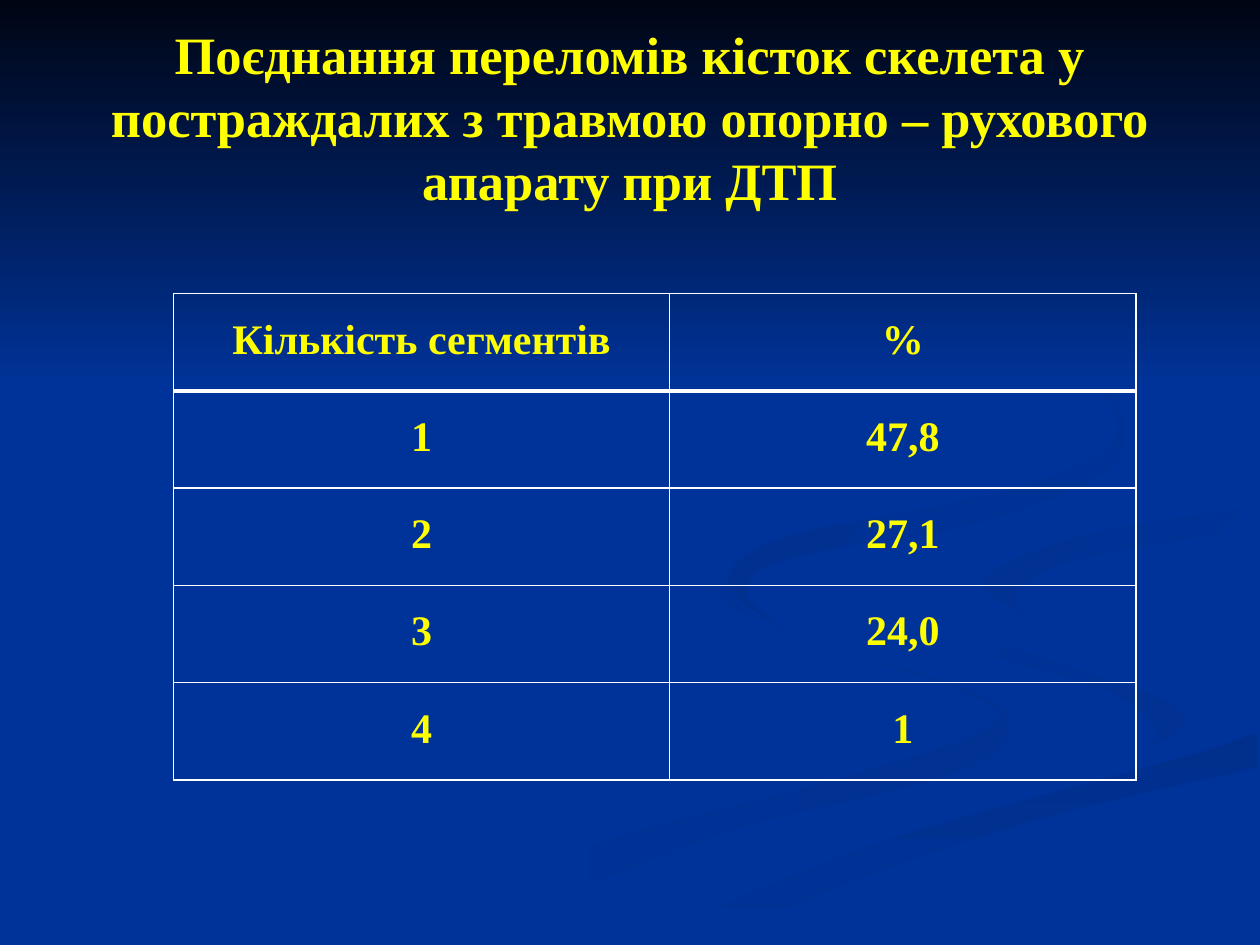
from lxml.etree import SubElement
from pptx import Presentation
from pptx.dml.color import RGBColor
from pptx.enum.shapes import MSO_SHAPE
from pptx.enum.text import MSO_ANCHOR, PP_ALIGN
from pptx.oxml.ns import qn
from pptx.util import Cm, Pt

TITLE = "Поєднання переломів кісток скелета у постраждалих з травмою опорно – рухового апарату при ДТП"
ROWS = [
    ("Кількість сегментів", "%"),
    ("1", "47,8"),
    ("2", "27,1"),
    ("3", "24,0"),
    ("4", "1"),
]
THEME = {
    "font": "Times New Roman", "title": Pt(30), "cell": Pt(24),
    "text": "FFFF00", "line": "FFFFFF", "back": "003399",
    "night": "000514", "shade": "003193", "deep": "002F8C",
}
GRID = Cm(0.0254)  # ribbon points are in hundredths of an inch
STEPS = 5

# Each ribbon: first colour, last colour, gradient angle, and its two edges
RIBBONS = [
    ("back", "shade", 0,
     [(575, 459), (594, 485), (682, 519), (781, 553), (800, 581), (756, 614), (564, 665), (361, 749)],
     [(300, 749), (458, 674), (684, 613), (780, 579), (781, 556), (679, 519), (576, 480), (575, 459)]),
    ("back", "shade", 45,
     [(724, 464), (758, 498), (870, 530), (943, 570), (894, 605)],
     [(894, 605), (918, 581), (880, 549), (766, 512), (724, 464)]),
    ("deep", "back", 90,
     [(503, 749), (630, 693), (797, 638), (998, 581)],
     [(998, 609), (821, 651), (670, 702), (571, 749)]),
    ("back", "back", 0,
     [(999, 387), (808, 417), (725, 464), (793, 509), (943, 570), (812, 625), (619, 684), (477, 749)],
     [(503, 749), (696, 669), (999, 581), (999, 538), (832, 498), (782, 460), (865, 424), (999, 402)]),
    ("shade", "back", 45,
     [(998, 402), (865, 424), (781, 460), (826, 496)],
     [(826, 496), (805, 472), (859, 443), (998, 420)]),
    ("deep", "back", 45,
     [(762, 233), (864, 291), (889, 362), (786, 412), (624, 444), (593, 470), (622, 500)],
     [(622, 500), (577, 462), (625, 426), (791, 392), (886, 348), (846, 279), (762, 233)]),
]


def color(name):
    return RGBColor.from_string(THEME[name])


def smooth(points):
    """Return the points joined by a Catmull-Rom curve."""
    padded = [points[0], *points, points[-1]]
    curve = [points[0]]
    for a, b, c, d in zip(padded, padded[1:], padded[2:], padded[3:]):
        for step in range(1, STEPS + 1):
            t = step / STEPS
            curve.append(tuple(
                q + t * ((r - p) + t * ((2 * p - 5 * q + 4 * r - s) + t * (3 * (q - r) + s - p))) / 2
                for p, q, r, s in zip(a, b, c, d)))
    return curve


def paint(shape, first, last, angle):
    shape.shadow.inherit = False
    shape.line.fill.background()
    shape.fill.gradient()
    shape.fill.gradient_angle = -angle % 360
    for stop, name, position in zip(shape.fill.gradient_stops, (first, last), (0, 1)):
        stop.color.rgb = color(name)
        stop.position = position


def add_ribbon(page, first, last, angle, outer, inner):
    points = smooth(outer) + smooth(inner)
    builder = page.shapes.build_freeform(*points[0], scale=GRID)
    builder.add_line_segments(points[1:], close=True)
    paint(builder.convert_to_shape(), first, last, angle)


def write(frame, text, size):
    paragraph = frame.paragraphs[0]
    paragraph.text = text
    paragraph.alignment = PP_ALIGN.CENTER
    font = paragraph.font
    font.name, font.size, font.bold = THEME["font"], THEME[size], True
    font.color.rgb = color("text")
    return paragraph


def add_title(page):
    box = page.shapes.add_textbox(Cm(1.27), Cm(0.76), Cm(22.86), Cm(3.18))
    box.text_frame.word_wrap = True
    box.text_frame.vertical_anchor = MSO_ANCHOR.MIDDLE
    write(box.text_frame, TITLE, "title")


def set_borders(cell, widths):
    """Draw the left, right, top and bottom borders, widths in that order."""
    properties = cell._tc.get_or_add_tcPr()
    for index, (side, width) in enumerate(zip(("lnL", "lnR", "lnT", "lnB"), widths)):
        line = SubElement(properties, qn(f"a:{side}"), w=str(Pt(width)))
        properties.insert(index, line)
        fill = SubElement(line, qn("a:solidFill"))
        SubElement(fill, qn("a:srgbClr"), val=THEME["line"])


def add_segment_table(page):
    widths, height = (Cm(10), Cm(9.4)), Cm(1.96)
    frame = page.shapes.add_table(len(ROWS), len(widths), Cm(3.5), Cm(5.92),
                                  sum(widths), height * len(ROWS))
    table = frame.table
    for column, width in zip(table.columns, widths):
        column.width = width
    for row_index, values in enumerate(ROWS):
        table.rows[row_index].height = height
        top = 3 if row_index == 1 else 1
        bottom = 3 if row_index == 0 else 1
        for column_index, value in enumerate(values):
            cell = table.cell(row_index, column_index)
            cell.fill.background()
            cell.margin_left = cell.margin_right = Cm(0.18)
            cell.margin_top = cell.margin_bottom = 0
            write(cell.text_frame, value, "cell").line_spacing = 1.5
            set_borders(cell, (1, 1, top, bottom))


def main():
    deck = Presentation()
    deck.slide_width, deck.slide_height = Cm(25.4), Cm(19.05)
    page = deck.slides.add_slide(deck.slide_layouts[6])
    page.background.fill.solid()
    page.background.fill.fore_color.rgb = color("back")
    for ribbon in RIBBONS:
        add_ribbon(page, *ribbon)
    sky = page.shapes.add_shape(MSO_SHAPE.RECTANGLE, 0, 0, deck.slide_width, Cm(7.82))
    paint(sky, "night", "back", 90)
    add_title(page)
    add_segment_table(page)
    deck.save("out.pptx")


if __name__ == "__main__":
    main()
